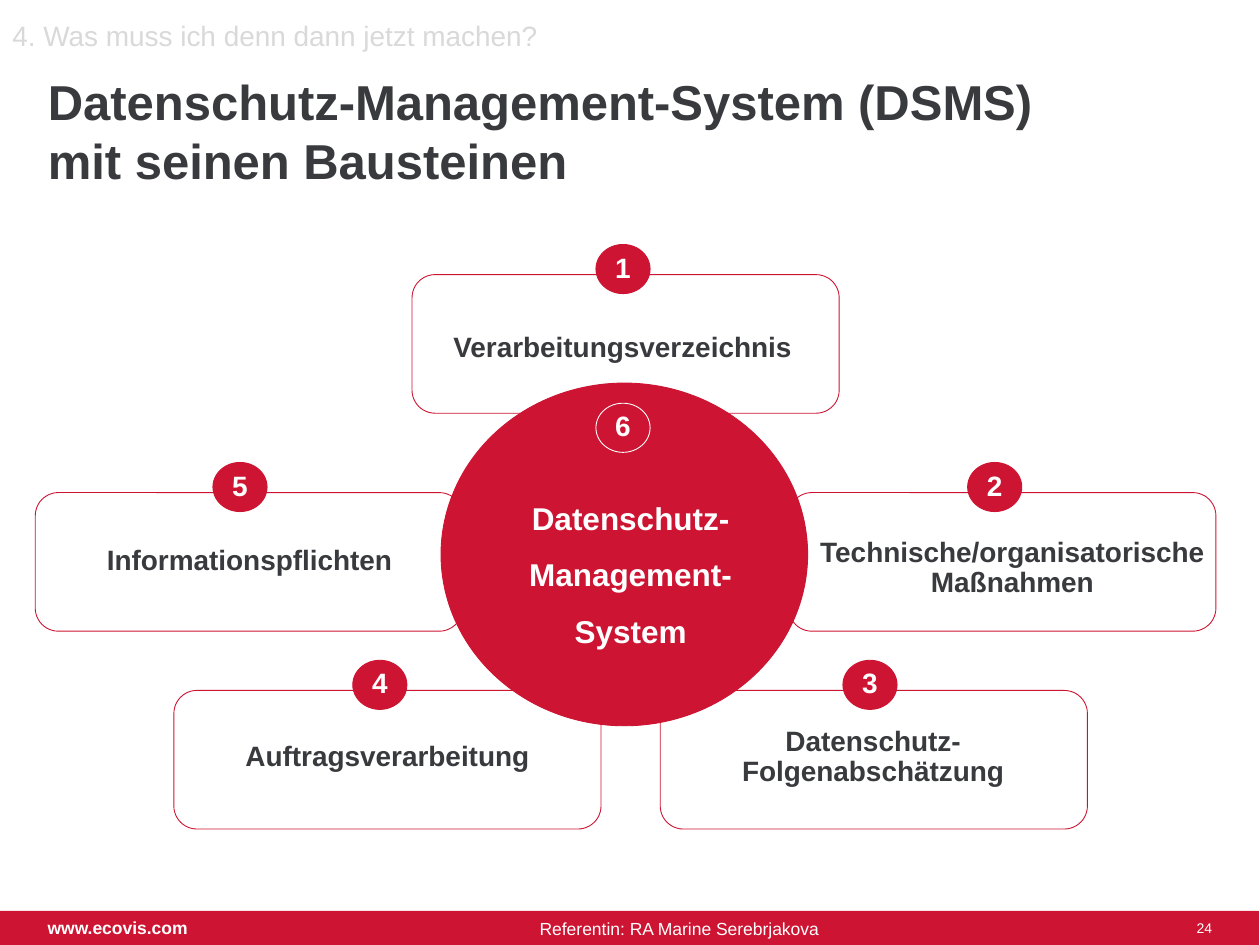
"""Build the slide on the building blocks of a data protection management system."""
from dataclasses import dataclass

from pptx import Presentation
from pptx.dml.color import RGBColor
from pptx.enum.shapes import MSO_SHAPE
from pptx.enum.text import MSO_ANCHOR, MSO_AUTO_SIZE, PP_ALIGN
from pptx.util import Emu, Inches, Pt

RECT, ROUND, OVAL = MSO_SHAPE.RECTANGLE, MSO_SHAPE.ROUNDED_RECTANGLE, MSO_SHAPE.OVAL
LEFT, CENTER, RIGHT = PP_ALIGN.LEFT, PP_ALIGN.CENTER, PP_ALIGN.RIGHT
TOP, MIDDLE = MSO_ANCHOR.TOP, MSO_ANCHOR.MIDDLE
COLS, ROWS = 100, 75
BOX_W, BOX_H = 33.9, 11
BADGE_W, BADGE_H, BADGE_RISE = 4.3, 3.9, 2.4


@dataclass(frozen=True)
class Theme:
    font: str = "Arial"
    red: str = "CD1432"
    dark: str = "393A3E"
    pale: str = "D9D9D9"
    white: str = "FFFFFF"
    title: int = 28
    core: int = 18
    label: int = 16
    footer: int = 10
    page: int = 8


@dataclass(frozen=True)
class Area:
    col: float
    row: float
    cols: float
    rows: float


@dataclass(frozen=True)
class Style:
    size: int
    color: str
    bold: bool = False
    align: PP_ALIGN = LEFT
    spacing: float = 1.0
    anchor: MSO_ANCHOR = TOP


@dataclass(frozen=True)
class Block:
    number: str
    col: float
    row: float
    badge_col: float
    text: str
    label: Area
    align: PP_ALIGN = LEFT


T = Theme()
CORE = Area(35, 30.4, 29.1, 27.2)
BADGE = Style(T.label, T.white, True, CENTER, 0.9, MIDDLE)
BLOCKS = [
    Block("1", 32.7, 21.8, 47.3, "Verarbeitungsverzeichnis", Area(35, 26, 29.4, 3.4)),
    Block("2", 62.6, 39.1, 76.8, "Technische/organisatorische Maßnahmen",
          Area(63.4, 42.2, 33.9, 5.9), CENTER),
    Block("3", 52.4, 54.8, 66.9, "Datenschutz-Folgenabschätzung",
          Area(56.3, 57.2, 26, 5.9), CENTER),
    Block("4", 13.8, 54.8, 28, "Auftragsverarbeitung", Area(18.5, 58.4, 26, 3.4)),
    Block("5", 2.8, 39.1, 16.9, "Informationspflichten", Area(7.5, 42.9, 26, 3.4)),
]


def place(prs, area: Area) -> tuple[Emu, Emu, Emu, Emu]:
    """Turn grid columns and rows into slide lengths."""
    w, h = prs.slide_width / COLS, prs.slide_height / ROWS
    return (Emu(round(area.col * w)), Emu(round(area.row * h)),
            Emu(round(area.cols * w)), Emu(round(area.rows * h)))


def write(sp, lines: list[str], style: Style, inset: bool = True) -> None:
    """Fill a shape with formatted paragraphs."""
    tf = sp.text_frame
    tf.word_wrap = True
    tf.auto_size = MSO_AUTO_SIZE.NONE
    tf.vertical_anchor = style.anchor
    tf.margin_left = tf.margin_right = Inches(0.1 if inset else 0)
    tf.margin_top = tf.margin_bottom = Inches(0.05 if inset else 0)
    for i, line in enumerate(lines):
        p = tf.add_paragraph() if i else tf.paragraphs[0]
        p.alignment, p.line_spacing = style.align, style.spacing
        p.space_before = Pt(0)
        r = p.add_run()
        r.text = line
        r.font.name, r.font.size, r.font.bold = T.font, Pt(style.size), style.bold
        r.font.color.rgb = RGBColor.from_string(style.color)


def add_text(prs, s, area: Area, lines: list[str], style: Style) -> None:
    """Add a text box on the grid."""
    write(s.shapes.add_textbox(*place(prs, area)), lines, style)


def add_shape(prs, s, kind: MSO_SHAPE, area: Area, fill: str | None = T.red,
              line: str = T.red, weight: float = 0.5):
    """Add an outlined shape on the grid, filled when a colour is given."""
    sp = s.shapes.add_shape(kind, *place(prs, area))
    sp.shadow.inherit = False
    if fill:
        sp.fill.solid()
        sp.fill.fore_color.rgb = RGBColor.from_string(fill)
    else:
        sp.fill.background()
    sp.line.color.rgb = RGBColor.from_string(line)
    sp.line.width = Pt(weight)
    return sp


def add_badge(prs, s, number: str, col: float, row: float, line: str = T.red) -> None:
    """Add a numbered oval."""
    sp = add_shape(prs, s, OVAL, Area(col, row, BADGE_W, BADGE_H), line=line)
    write(sp, [number], BADGE, inset=False)


def add_footer(prs, s) -> None:
    """Add the footer bar with address, speaker and page number."""
    add_shape(prs, s, RECT, Area(-0.1, 72.3, 100, 2.7), weight=0.25)
    add_text(prs, s, Area(2.8, 72.9, 30.5, 1.4), ["www.ecovis.com"],
             Style(T.footer, T.white, True, anchor=MIDDLE))
    add_text(prs, s, Area(35.8, 72.9, 36.2, 1.6), ["Referentin: RA Marine Serebrjakova"],
             Style(T.footer, T.white, align=CENTER, anchor=MIDDLE))
    add_text(prs, s, Area(92.2, 72.8, 5, 1.7), ["24"],
             Style(T.page, T.white, align=RIGHT, anchor=MIDDLE))


def add_diagram(prs, s) -> None:
    """Add the blocks around the central oval."""
    for b in BLOCKS:
        add_shape(prs, s, ROUND, Area(b.col, b.row, BOX_W, BOX_H), fill=None)
        add_text(prs, s, b.label, [b.text], Style(T.label, T.dark, True, b.align, 0.9))
    add_shape(prs, s, OVAL, CORE)
    add_text(prs, s, Area(39.8, 37.6, 20.5, 14.6), ["Datenschutz-Management-", "System"],
             Style(T.core, T.white, True, CENTER, 1.5))
    for b in BLOCKS:
        add_badge(prs, s, b.number, b.badge_col, b.row - BADGE_RISE)
    add_badge(prs, s, "6", 47.3, 32, T.white)


def main() -> None:
    """Build and save the slide."""
    prs = Presentation()
    prs.slide_width, prs.slide_height = Inches(10), Inches(7.5)
    s = prs.slides.add_slide(prs.slide_layouts[5])
    title = s.shapes.title
    title.left, title.top, title.width, title.height = place(prs, Area(2.8, 5.2, 85.8, 8.7))
    write(title, ["Datenschutz-Management-System (DSMS) mit seinen Bausteinen"],
          Style(T.title, T.dark, True))
    add_footer(prs, s)
    add_diagram(prs, s)
    add_text(prs, s, Area(0, 1.3, 83.9, 3.4), ["4. Was muss ich denn dann jetzt machen?"],
             Style(T.label, T.pale, spacing=0.9))
    prs.save("out.pptx")


if __name__ == "__main__":
    main()
